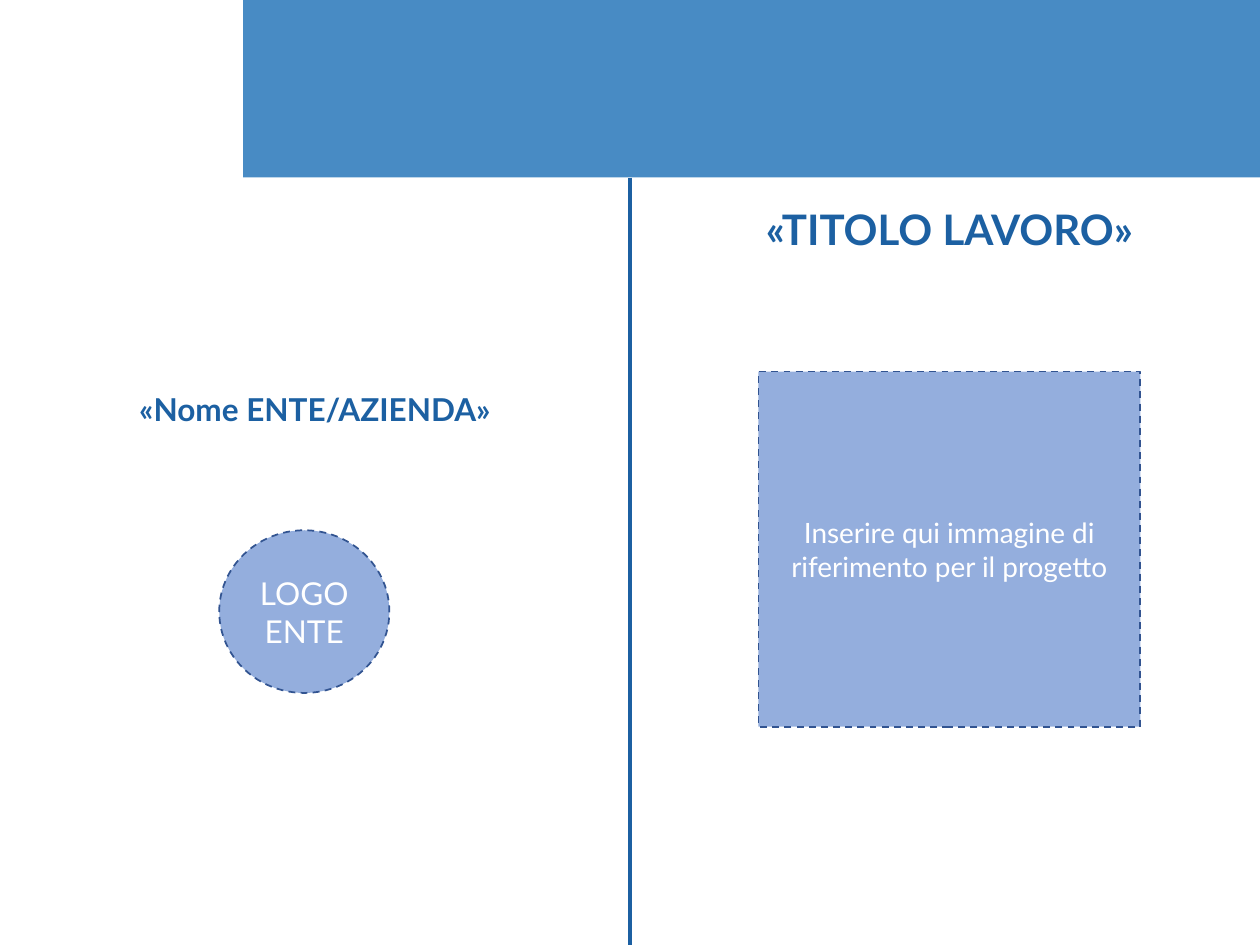
import lxml.etree
import pptx
import pptx.dml.color
import pptx.enum.dml
import pptx.enum.shapes
import pptx.enum.text
import pptx.oxml.ns
import pptx.util

SHAPES = pptx.enum.shapes.MSO_SHAPE
COLORS = {
    "banner": "488BC4",
    "title": "1C60A2",
    "placeholder": "4472C4",
    "outline": "325491",
    "white": "FFFFFF",
}
WIDTH, HEIGHT = 25.4, 19.05
MIDDLE = WIDTH / 2
BANNER_LEFT, BANNER_HEIGHT = 4.9, 3.58

# text, (left, top, width, height) in cm, font size
HEADINGS = [
    ("«Nome ENTE/AZIENDA»", (0, 7.06, MIDDLE, 2.46), 18),
    ("«TITOLO LAVORO»", (12.88, 4.09, 12.52, 1.19), 24),
]
# text, preset, (left, top, width, height) in cm, font size
PLACEHOLDERS = [
    ("LOGO ENTE", SHAPES.OVAL, (4.42, 10.69, 3.43, 3.28), 18),
    ("Inserire qui immagine di riferimento per il progetto",
     SHAPES.RECTANGLE, (15.29, 7.49, 7.7, 7.16), 16),
]


def rgb(name):
    return pptx.dml.color.RGBColor.from_string(COLORS[name])


def add_child(parent, tag, **attributes):
    lxml.etree.SubElement(parent, pptx.oxml.ns.qn(tag), **attributes)


def add_block(page, preset, place, fill, opacity=100, dashed=False):
    """Add a filled shape; opacity is a percentage."""
    block = page.shapes.add_shape(preset, *map(pptx.util.Cm, place))
    block.shadow.inherit = False
    block.fill.solid()
    block.fill.fore_color.rgb = rgb(fill)
    if opacity < 100:
        color = block._element.spPr.find(".//" + pptx.oxml.ns.qn("a:srgbClr"))
        add_child(color, "a:alpha", val=str(opacity * 1000))
    if dashed:
        block.line.color.rgb = rgb("outline")
        block.line.width = pptx.util.Pt(1)
        block.line.dash_style = pptx.enum.dml.MSO_LINE.DASH
    else:
        block.line.fill.background()
    return block


def write(block, text, size, color, bold=False, spacing=None, inset=None):
    frame = block.text_frame
    frame.word_wrap = True
    frame.vertical_anchor = pptx.enum.text.MSO_ANCHOR.MIDDLE
    if inset is not None:
        frame.margin_left = frame.margin_right = pptx.util.Cm(inset)
        frame.margin_top = frame.margin_bottom = pptx.util.Cm(inset)
    para = frame.paragraphs[0]
    para.alignment = pptx.enum.text.PP_ALIGN.CENTER
    para.line_spacing = spacing
    span = para.add_run()
    span.text = text
    span.font.name = "Lato"
    span.font.size = pptx.util.Pt(size)
    span.font.bold = bold
    span.font.color.rgb = rgb(color)


def add_divider(page):
    ends = (MIDDLE, BANNER_HEIGHT, MIDDLE, HEIGHT)
    divider = page.shapes.add_connector(
        pptx.enum.shapes.MSO_CONNECTOR.STRAIGHT, *map(pptx.util.Cm, ends))
    divider.line.color.rgb = rgb("title")
    divider.line.width = pptx.util.Pt(2.25)
    add_child(divider._element.spPr, "a:effectLst")


def main():
    deck = pptx.Presentation()
    deck.slide_width = pptx.util.Cm(WIDTH)
    deck.slide_height = pptx.util.Cm(HEIGHT)
    page = deck.slides.add_slide(deck.slide_layouts[6])

    banner = (BANNER_LEFT, 0, WIDTH - BANNER_LEFT, BANNER_HEIGHT)
    add_block(page, SHAPES.RECTANGLE, banner, "banner")
    for text, place, size in HEADINGS:
        box = add_block(page, SHAPES.RECTANGLE, place, "white", opacity=9)
        write(box, text, size, "title", bold=True, spacing=0.9, inset=0.15)
    for text, preset, place, size in PLACEHOLDERS:
        box = add_block(page, preset, place, "placeholder", opacity=57, dashed=True)
        write(box, text, size, "white")
    add_divider(page)

    deck.save("out.pptx")


if __name__ == "__main__":
    main()
